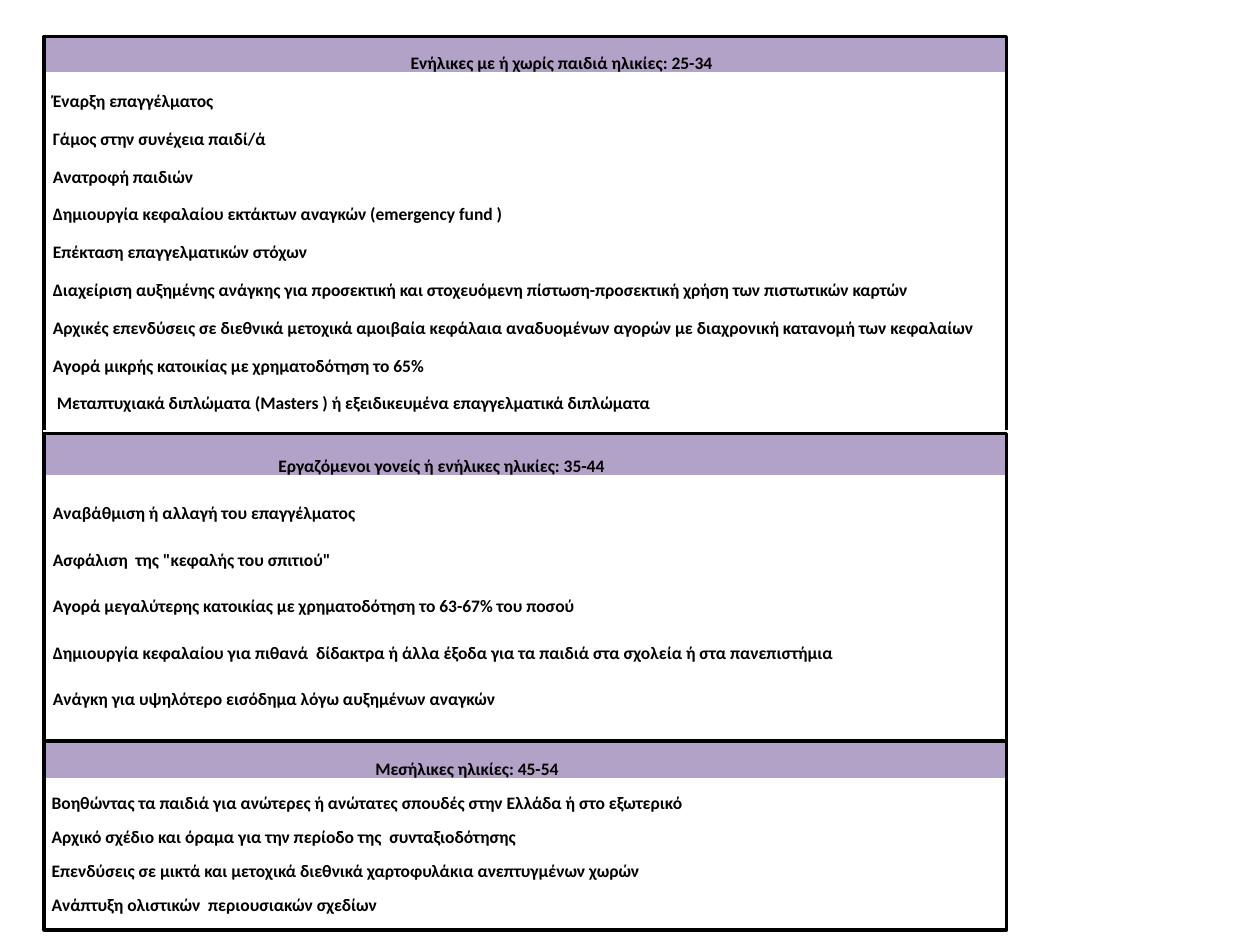
from dataclasses import dataclass

from lxml.etree import SubElement
from pptx import Presentation
from pptx.dml.color import RGBColor
from pptx.enum.shapes import MSO_SHAPE
from pptx.enum.text import MSO_ANCHOR
from pptx.oxml.ns import qn
from pptx.util import Inches, Pt


@dataclass(frozen=True)
class Theme:
    """Colours, font and sizes of the slide."""
    head: str = "B3A2C7"
    paper: str = "FFFFFF"
    ink: str = "000000"
    font: str = "Calibri"
    size: float = 10
    rule: float = 1
    thick: float = 3
    frame: float = 2


THEME = Theme()

GROUPS = [
    {
        "box": (0.35, 0.29, 7.65), "rows": (0.3, 0.3), "indent": 2.91,
        "frame": (0.35, 0.29, 7.64, 3.15), "fill": THEME.paper,
        "title": "Ενήλικες με ή χωρίς παιδιά ηλικίες: 25-34",
        "lines": [
            "Έναρξη επαγγέλματος",
            "Γάμος στην συνέχεια παιδί/ά",
            "Ανατροφή παιδιών",
            "Δημιουργία κεφαλαίου εκτάκτων αναγκών (emergency fund )",
            "Επέκταση επαγγελματικών στόχων",
            "Διαχείριση αυξημένης ανάγκης για προσεκτική και στοχευόμενη "
            "πίστωση-προσεκτική χρήση των πιστωτικών καρτών",
            "Αρχικές επενδύσεις σε διεθνικά μετοχικά αμοιβαία κεφάλαια "
            "αναδυομένων αγορών με διαχρονική κατανομή των κεφαλαίων",
            "Αγορά μικρής κατοικίας με χρηματοδότηση το 65%",
            " Μεταπτυχιακά διπλώματα (Masters ) ή εξειδικευμένα "
            "επαγγελματικά διπλώματα",
        ],
    },
    {
        "box": (0.35, 3.42, 7.65), "rows": (0.37, 0.37), "indent": 1.86,
        "frame": (0.35, 3.44, 7.64, 2.44), "fill": THEME.paper,
        "title": "Εργαζόμενοι γονείς ή ενήλικες ηλικίες: 35-44",
        "lines": [
            "Αναβάθμιση ή αλλαγή του επαγγέλματος",
            'Ασφάλιση  της "κεφαλής του σπιτιού"',
            "Αγορά μεγαλύτερης κατοικίας με χρηματοδότηση το 63-67% του ποσού",
            "Δημιουργία κεφαλαίου για πιθανά  δίδακτρα ή άλλα έξοδα για τα "
            "παιδιά στα σχολεία ή στα πανεπιστήμια",
            "Ανάγκη για υψηλότερο εισόδημα λόγω αυξημένων αναγκών",
        ],
    },
    {
        "box": (0.34, 5.88, 7.65), "rows": (0.31, 0.27), "indent": 2.64,
        "frame": (0.35, 5.88, 7.64, 1.5), "fill": None,
        "title": "Μεσήλικες ηλικίες: 45-54",
        "lines": [
            "Βοηθώντας τα παιδιά για ανώτερες ή ανώτατες σπουδές στην Ελλάδα "
            "ή στο εξωτερικό",
            "Αρχικό σχέδιο και όραμα για την περίοδο της  συνταξιοδότησης",
            "Επενδύσεις σε μικτά και μετοχικά διεθνικά χαρτοφυλάκια "
            "ανεπτυγμένων χωρών",
            "Ανάπτυξη ολιστικών  περιουσιακών σχεδίων",
        ],
    },
]


def apply(item, values):
    """Set each named value on the item."""
    for name, value in values.items():
        setattr(item, name, value)


def edge(cell, widths):
    """Draw the cell borders with the given widths in points."""
    props = cell._tc.get_or_add_tcPr()
    for side, width in widths.items():
        line = SubElement(props, qn(f"a:ln{side}"), w=str(Pt(width)))
        fill = SubElement(line, qn("a:solidFill"))
        SubElement(fill, qn("a:srgbClr"), val=THEME.paper)


def write(cell, text, fill, indent, top, base):
    """Fill one cell with its text, colour and borders."""
    edge(cell, {"L": THEME.rule, "R": THEME.rule, "T": top, "B": base})
    if fill:
        cell.fill.solid()
        cell.fill.fore_color.rgb = RGBColor.from_string(fill)
    else:
        cell.fill.background()
    apply(cell, {
        "margin_left": Inches(indent), "margin_right": Inches(0.07),
        "margin_top": 0, "margin_bottom": 0,
        "vertical_anchor": MSO_ANCHOR.BOTTOM,
    })
    para = cell.text_frame.paragraphs[0]
    para.line_spacing = 1.07
    run = para.add_run()
    run.text = text
    apply(run.font, {"name": THEME.font, "size": Pt(THEME.size), "bold": True})
    run.font.color.rgb = RGBColor.from_string(THEME.ink)


def add_list(slide, box, group):
    """Place the table of one age group in its box."""
    left, top, width = map(Inches, box)
    first, rest = map(Inches, group["rows"])
    lines = group["lines"]
    high = first + rest * len(lines)
    table = slide.shapes.add_table(
        len(lines) + 1, 1, left, top, width, high).table
    apply(table, {"first_row": False, "horz_banding": False})
    for row in table.rows:
        row.height = rest
    table.rows[0].height = first
    write(table.cell(0, 0), group["title"], THEME.head, group["indent"],
          THEME.rule, THEME.thick)
    for index, text in enumerate(lines, 1):
        above = THEME.thick if index == 1 else THEME.rule
        write(table.cell(index, 0), text, group["fill"], 0.07,
              above, THEME.rule)


def add_frame(slide, box):
    """Outline the given box."""
    frame = slide.shapes.add_shape(MSO_SHAPE.RECTANGLE, *map(Inches, box))
    frame.shadow.inherit = False
    frame.fill.background()
    frame.line.width = Pt(THEME.frame)
    frame.line.color.rgb = RGBColor.from_string(THEME.ink)


def main():
    """Build and save the slide."""
    deck = Presentation()
    apply(deck, {"slide_width": Inches(10), "slide_height": Inches(7.5)})
    slide = deck.slides.add_slide(deck.slide_layouts[6])
    for group in GROUPS:
        add_list(slide, group["box"], group)
        add_frame(slide, group["frame"])
    deck.save("out.pptx")


if __name__ == "__main__":
    main()
